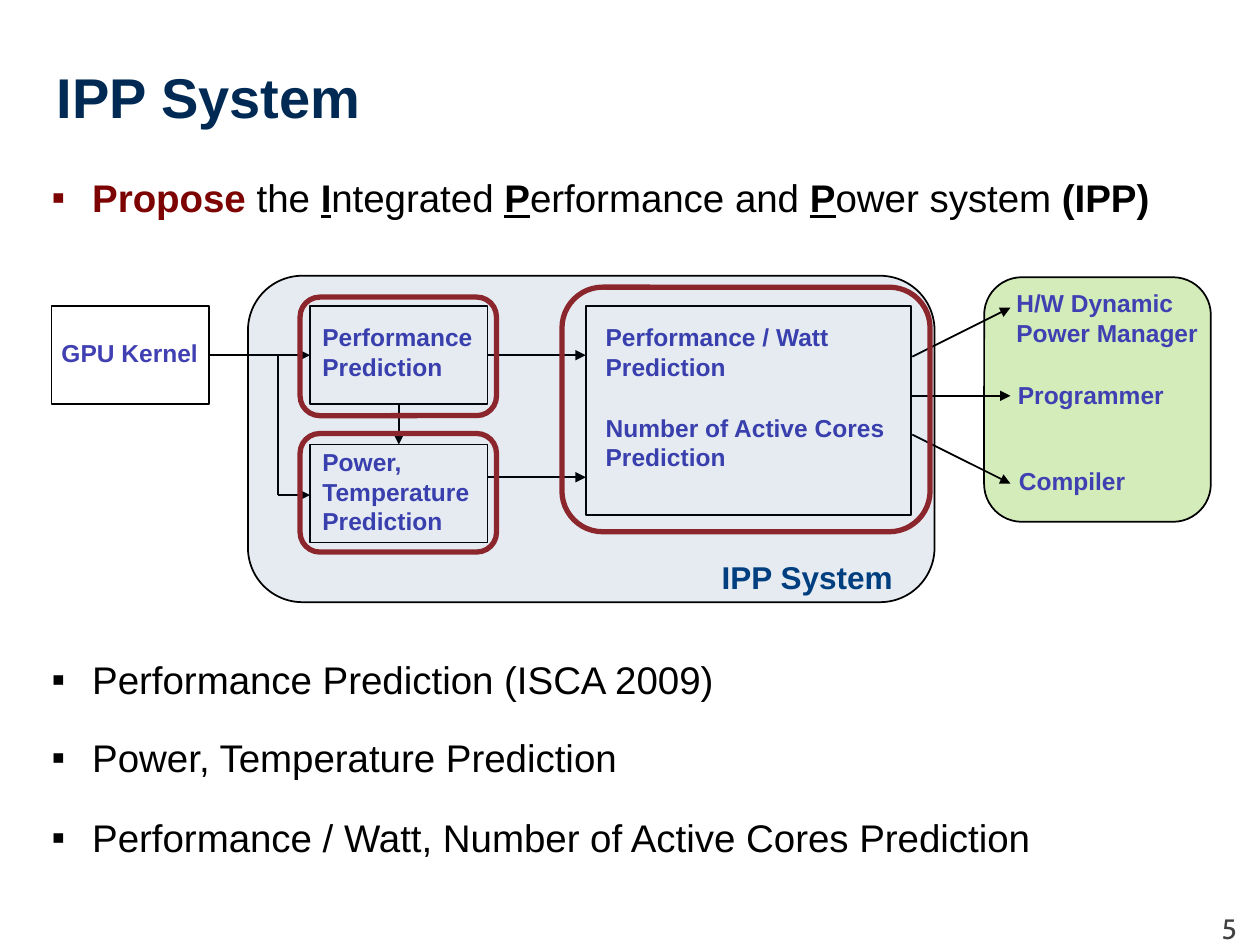
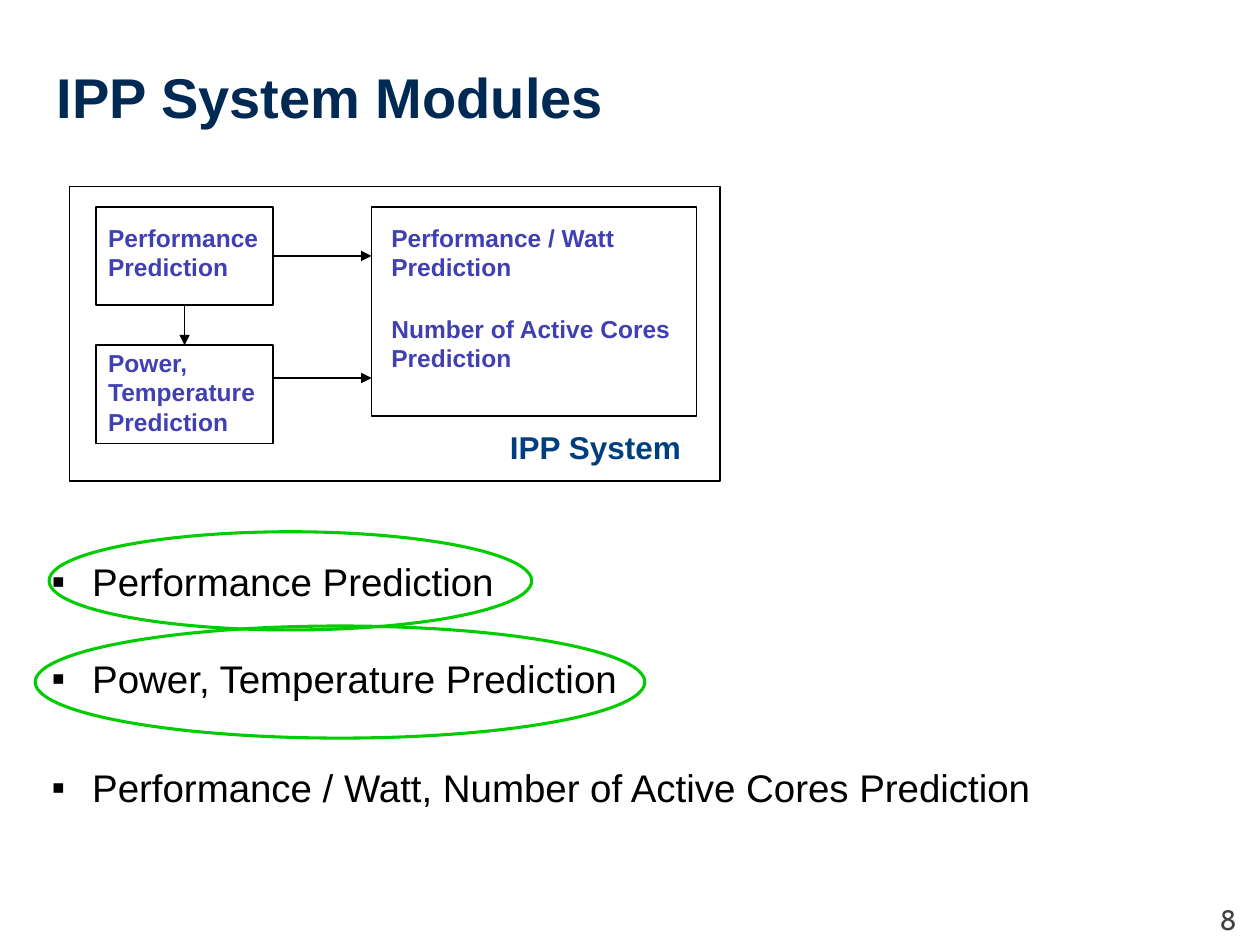
from lxml import etree
from pptx import Presentation
from pptx.dml.color import RGBColor
from pptx.enum.shapes import MSO_CONNECTOR, MSO_SHAPE
from pptx.enum.text import MSO_ANCHOR, PP_ALIGN
from pptx.oxml.ns import qn
from pptx.util import Cm, Pt

NAVY, BLUE, VIOLET = "002A54", "003F7F", "4040B3"
BLACK, GREY, MAROON = "000000", "404040", "7D0303"
RED, GREEN, LIME = "9C2424", "00CC00", "92D050"

BOX_W, BOX_H = 3.58, 1.98
POWER_TOP = 2.79
RESULT_LEFT, RESULT_W, RESULT_H = 5.56, 6.55, 4.22

MODULE_BOXES = [
    (0, 0, BOX_W, BOX_H),
    (0, POWER_TOP, BOX_W, BOX_H),
    (RESULT_LEFT, 0, RESULT_W, RESULT_H),
]
MODULE_LABELS = [
    (["Performance Prediction"], 0, 0.2, BOX_W, 1.45),
    (["Power, Temperature", "Prediction"], 0, 2.72, BOX_W, 2.06),
    (["Performance / Watt Prediction"], 5.71, 0.2, 5.56, 1.45),
    (["Number of Active Cores Prediction"], 5.71, 2.03, 6.35, 1.45),
]
MODULE_ARROWS = [
    (BOX_W / 2, BOX_H, BOX_W / 2, POWER_TOP),
    (BOX_W, BOX_H / 2, RESULT_LEFT, BOX_H / 2),
    (BOX_W, 3.45, RESULT_LEFT, 3.45),
]

PROPOSAL = [
    ("Propose", {"bold": True, "color": MAROON}),
    (" the ", {}),
    ("I", {"bold": True, "underline": True}),
    ("ntegrated ", {}),
    ("P", {"bold": True, "underline": True}),
    ("erformance and ", {}),
    ("P", {"bold": True, "underline": True}),
    ("ower system ", {}),
    ("(IPP)", {"bold": True}),
]
SYSTEM = {
    "title": "IPP System",
    "number": ("5", 18.26),
    "origin": (6.25, 6.17),
    "frame_label": (14.3, 11.13),
    "bullets": [
        (3.38, PROPOSAL),
        (13.11, [("Performance Prediction (ISCA 2009)", {})]),
        (14.68, [("Power, Temperature Prediction", {})]),
        (16.28, [("Performance / Watt, Number of Active Cores Prediction", {})]),
    ],
}
MODULES = {
    "title": "IPP System Modules",
    "number": ("8", 18.06),
    "origin": (1.93, 4.17),
    "frame_label": (10.03, 8.51),
    "bullets": [
        (11.13, [("Performance Prediction", {})]),
        (13.08, [("Power, Temperature Prediction", {})]),
        (15.27, [("Performance / Watt, Number of Active Cores Prediction", {})]),
    ],
}
USERS = [
    ("H/W Dynamic Power Manager", 20.24, 5.69, 4.4, 1.45),
    ("Programmer", 20.27, 7.54, 3.58, 0.86),
    ("Compiler", 20.29, 9.27, 3.58, 0.86),
]
USER_ARROWS = [(7.19, 6.2), (7.98, 7.98), (8.76, 9.75)]
HIGHLIGHTS = [
    (6.05, 5.99, 3.96, 2.39),
    (6.05, 8.74, 3.96, 2.39),
    (11.33, 5.79, 7.42, 4.93),
]
CIRCLES = [(0.99, 10.72, 9.73, 1.98), (0.71, 12.62, 12.29, 2.26)]


def rgb(color):
    return RGBColor.from_string(color)


def add_outline(slide, kind, place, line=BLACK, width=1, fill=None, opacity=100):
    outline = slide.shapes.add_shape(kind, *map(Cm, place))
    outline.shadow.inherit = False
    outline.line.color.rgb = rgb(line)
    outline.line.width = Pt(width)
    if fill is None:
        outline.fill.background()
        return
    outline.fill.solid()
    outline.fill.fore_color.rgb = rgb(fill)
    tint = outline.fill._xPr.find(qn("a:solidFill"))[0]
    etree.SubElement(tint, qn("a:alpha"), val=str(opacity * 1000))


def add_line(slide, ends, arrow=True):
    link = slide.shapes.add_connector(MSO_CONNECTOR.STRAIGHT, *map(Cm, ends))
    link.line.color.rgb = rgb(BLACK)
    link.line.width = Pt(1)
    if arrow:
        etree.SubElement(link.line._get_or_add_ln(), qn("a:tailEnd"), type="triangle")
    etree.SubElement(link._element.spPr, qn("a:effectLst"))


def add_text(slide, place, paragraphs, size, color, bold=False, font="Arial",
             align=PP_ALIGN.LEFT, anchor=MSO_ANCHOR.TOP, bullet=None):
    frame = slide.shapes.add_textbox(*map(Cm, place)).text_frame
    frame.word_wrap = True
    frame.vertical_anchor = anchor
    for index, runs in enumerate(paragraphs):
        paragraph = frame.paragraphs[0] if index == 0 else frame.add_paragraph()
        paragraph.alignment = align
        if bullet:
            properties = paragraph._p.get_or_add_pPr()
            properties.set("marL", str(Cm(0.82)))
            properties.set("indent", str(-Cm(0.82)))
            etree.SubElement(properties, qn("a:buFont"), typeface="Arial")
            etree.SubElement(properties, qn("a:buChar"), char=bullet)
        paragraph.font.name = font
        paragraph.font.size = Pt(size)
        paragraph.font.bold = bold
        paragraph.font.color.rgb = rgb(color)
        for words, style in runs:
            run = paragraph.add_run()
            run.text = words
            if "bold" in style:
                run.font.bold = style["bold"]
            if "underline" in style:
                run.font.underline = style["underline"]
            if "color" in style:
                run.font.color.rgb = rgb(style["color"])


def add_label(slide, lines, place, size=14, color=VIOLET):
    add_text(slide, place, [[(line, {})] for line in lines], size, color, bold=True)


def add_page(deck, content):
    slide = deck.slides.add_slide(deck.slide_layouts[6])
    add_text(slide, (0.89, 0.89, 22.86, 2.11), [[(content["title"], {})]], 32, NAVY,
             bold=True, anchor=MSO_ANCHOR.MIDDLE)
    number, top = content["number"]
    add_text(slide, (23.5, top, 1.68, 0.43), [[(number, {})]], 16, GREY,
             font="Cabin", align=PP_ALIGN.RIGHT)
    for top, runs in content["bullets"]:
        add_text(slide, (0.79, top, 23.83, 1.19), [runs], 22, BLACK, bullet="▪")
    return slide


def add_modules(slide, content):
    left, top = content["origin"]
    for x, y, width, height in MODULE_BOXES:
        add_outline(slide, MSO_SHAPE.RECTANGLE, (left + x, top + y, width, height))
    for lines, x, y, width, height in MODULE_LABELS:
        add_label(slide, lines, (left + x, top + y, width, height))
    for x1, y1, x2, y2 in MODULE_ARROWS:
        add_line(slide, (left + x1, top + y1, left + x2, top + y2))
    add_label(slide, ["IPP System"], (*content["frame_label"], 4.2, 1.02), 18, BLUE)


def build_system(deck):
    slide = add_page(deck, SYSTEM)
    add_outline(slide, MSO_SHAPE.ROUNDED_RECTANGLE, (19.84, 5.59, 4.57, 4.93),
                fill=LIME, opacity=40)
    add_outline(slide, MSO_SHAPE.RECTANGLE, (1.04, 6.17, 3.18, BOX_H))
    add_label(slide, ["GPU Kernel"], (0.99, 6.68, 3.38, 0.86))
    add_line(slide, (4.22, 7.16, 6.25, 7.16))
    add_line(slide, (5.61, 9.98, 5.61, 7.16), arrow=False)
    add_line(slide, (5.61, 9.98, 6.25, 9.98))
    add_modules(slide, SYSTEM)
    for start, end in USER_ARROWS:
        add_line(slide, (18.39, start, 20.37, end))
    for user, *place in USERS:
        add_label(slide, [user], place)
    for place in HIGHLIGHTS:
        add_outline(slide, MSO_SHAPE.ROUNDED_RECTANGLE, place, RED, 3)
    add_outline(slide, MSO_SHAPE.ROUNDED_RECTANGLE, (5, 5.56, 13.84, 6.58),
                fill=BLUE, opacity=10)


def build_modules(deck):
    slide = add_page(deck, MODULES)
    add_modules(slide, MODULES)
    add_outline(slide, MSO_SHAPE.RECTANGLE, (1.4, 3.76, 13.11, 5.94))
    for place in CIRCLES:
        add_outline(slide, MSO_SHAPE.OVAL, place, GREEN, 1.75)


def main():
    deck = Presentation()
    deck.slide_width, deck.slide_height = Cm(25.4), Cm(19.05)
    build_system(deck)
    build_modules(deck)
    deck.save("out.pptx")


if __name__ == "__main__":
    main()
